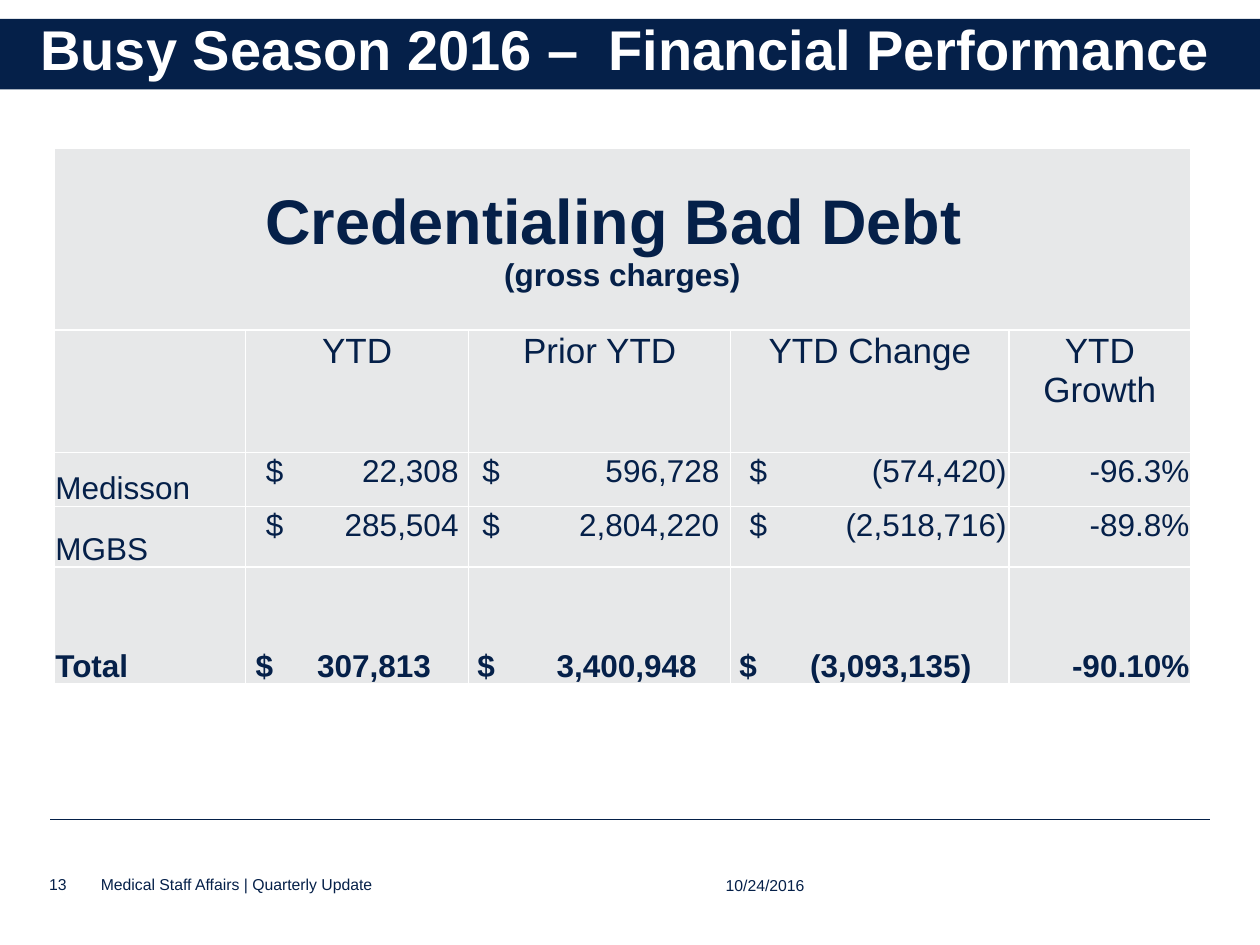
from lxml import etree
from pptx import Presentation, oxml
from pptx.dml.color import RGBColor
from pptx.enum import shapes, text
from pptx.oxml.ns import qn
from pptx.util import Inches, Pt

COLORS = {"navy": "052049", "grey": "E7E8E9", "white": "FFFFFF"}
NS = 'xmlns:a="http://schemas.openxmlformats.org/drawingml/2006/main"'
LEFT, CENTER, RIGHT = text.PP_ALIGN.LEFT, text.PP_ALIGN.CENTER, text.PP_ALIGN.RIGHT
TOP, MIDDLE, BOTTOM = text.MSO_ANCHOR.TOP, text.MSO_ANCHOR.MIDDLE, text.MSO_ANCHOR.BOTTOM

COLUMNS = [1.52, 1.77, 2.08, 2.21, 1.44]
ROWS = [1.44, 0.97, 0.43, 0.48, 0.93]
HEADERS = ["YTD", "Prior YTD", "YTD Change", "YTD Growth"]
BODY = [
    ["Medisson", "22,308", "596,728", "(574,420)", "-96.3%"],
    ["MGBS", "285,504", "2,804,220", "(2,518,716)", "-89.8%"],
    ["Total", "307,813", "3,400,948", "(3,093,135)", "-90.10%"],
]
# Start of the dollar sign and right edge of the amount, from the column's left
BODY_STOPS = [(0.16, 1.69), (0.11, 1.99), (0.15, 2.19)]
TOTAL_STOPS = [(0.08, 1.47), (0.07, 1.81), (0.07, 1.91)]


def rgb(name):
    return RGBColor.from_string(COLORS[name])


def add_tab(p, position, align):
    tabs = etree.SubElement(p._p.get_or_add_pPr(), qn("a:tabLst"))
    etree.SubElement(tabs, qn("a:tab"), pos=str(Inches(position)), algn=align)


def style(p, size, color="navy", bold=False, align=LEFT):
    p.alignment = align
    p.font.name = "Arial"
    p.font.size = Pt(size)
    p.font.bold = bold
    p.font.color.rgb = rgb(color)


def add_title(s, x, y, w, h):
    sp = s.shapes.add_shape(shapes.MSO_SHAPE.RECTANGLE, *map(Inches, (x, y, w, h)))
    sp.shadow.inherit = False
    sp.fill.solid()
    sp.fill.fore_color.rgb = rgb("navy")
    sp.line.fill.background()
    tf = sp.text_frame
    tf.word_wrap = True
    tf.vertical_anchor = TOP
    tf.margin_left = Inches(0.32)
    p = tf.paragraphs[0]
    p.text = "Busy Season 2016 –\tFinancial Performance"
    add_tab(p, 4.51, "l")
    p.line_spacing = 0.85
    style(p, 32, "white", bold=True)


def format_cell(cell):
    """Grey cell with white borders and narrow margins."""
    tc_pr = cell._tc.get_or_add_tcPr()
    for side in "LRTB":
        tc_pr.append(oxml.parse_xml(
            f'<a:ln{side} {NS} w="12700"><a:solidFill>'
            f'<a:srgbClr val="{COLORS["white"]}"/></a:solidFill></a:ln{side}>'))
    cell.fill.solid()
    cell.fill.fore_color.rgb = rgb("grey")
    cell.margin_left = cell.margin_right = cell.margin_top = Inches(0.01)
    cell.margin_bottom = 0


def fill_cell(cell, words, size=18, bold=False, align=LEFT, anchor=TOP):
    cell.vertical_anchor = anchor
    p = cell.text_frame.paragraphs[0]
    p.text = words
    style(p, size, bold=bold, align=align)


def fill_amount(cell, amount, stops, bold, anchor):
    start, end = stops
    cell.margin_left = Inches(start)
    add_tab(cell.text_frame.paragraphs[0], end - start, "r")
    fill_cell(cell, f"$\t{amount}", bold=bold, anchor=anchor)


def add_debt_table(s, x, y):
    table = s.shapes.add_table(len(ROWS), len(COLUMNS), Inches(x), Inches(y),
                               Inches(sum(COLUMNS)), Inches(sum(ROWS))).table
    table.first_row = table.horz_banding = False
    for column, width in zip(table.columns, COLUMNS):
        column.width = Inches(width)
    for row, height in zip(table.rows, ROWS):
        row.height = Inches(height)
    for cell in table.iter_cells():
        format_cell(cell)

    heading = table.cell(0, 0)
    heading.merge(table.cell(0, len(COLUMNS) - 1))
    fill_cell(heading, "Credentialing Bad Debt ", 36, True, CENTER, MIDDLE)
    p = heading.text_frame.add_paragraph()
    p.text = "(gross charges)"
    style(p, 18, bold=True, align=CENTER)

    for c, header in enumerate(HEADERS, 1):
        fill_cell(table.cell(1, c), header, 20, align=CENTER)

    for r, (name, *amounts, growth) in enumerate(BODY, 2):
        total = name == "Total"
        anchor = BOTTOM if total else TOP
        fill_cell(table.cell(r, 0), name, bold=total, anchor=BOTTOM)
        stops = TOTAL_STOPS if total else BODY_STOPS
        for c, (amount, stop) in enumerate(zip(amounts, stops), 1):
            fill_amount(table.cell(r, c), amount, stop, total, anchor)
        fill_cell(table.cell(r, 4), growth, bold=total, align=RIGHT, anchor=anchor)


def add_footer(s, x, y, w):
    line = s.shapes.add_connector(shapes.MSO_CONNECTOR.STRAIGHT, Inches(x), Inches(y),
                                  Inches(x + w), Inches(y))
    line.line.color.rgb = rgb("navy")
    line.line.width = Pt(0.25)
    etree.SubElement(line._element.spPr, qn("a:effectLst"))
    for words, dx, dy, width, height in [
        ("10/24/2016", 5.36, 0.42, 0.77, 0.18),
        ("Medical Staff Affairs | Quarterly Update", 0.4, 0.44, 4.71, 0.15),
        ("13", -0.01, 0.42, 0.27, 0.17),
    ]:
        box = s.shapes.add_textbox(Inches(x + dx), Inches(y + dy),
                                   Inches(width), Inches(height))
        tf = box.text_frame
        tf.word_wrap = True
        tf.vertical_anchor = BOTTOM
        tf.margin_left = tf.margin_right = tf.margin_top = tf.margin_bottom = 0
        tf.paragraphs[0].text = words
        style(tf.paragraphs[0], 9)


def main():
    prs = Presentation()
    prs.slide_width, prs.slide_height = Inches(10), Inches(7.5)
    s = prs.slides.add_slide(prs.slide_layouts[6])
    add_footer(s, 0.4, 6.5, 9.2)
    add_title(s, 0, 0.15, 10, 0.56)
    add_debt_table(s, 0.43, 1.18)
    prs.save("out.pptx")


if __name__ == "__main__":
    main()
